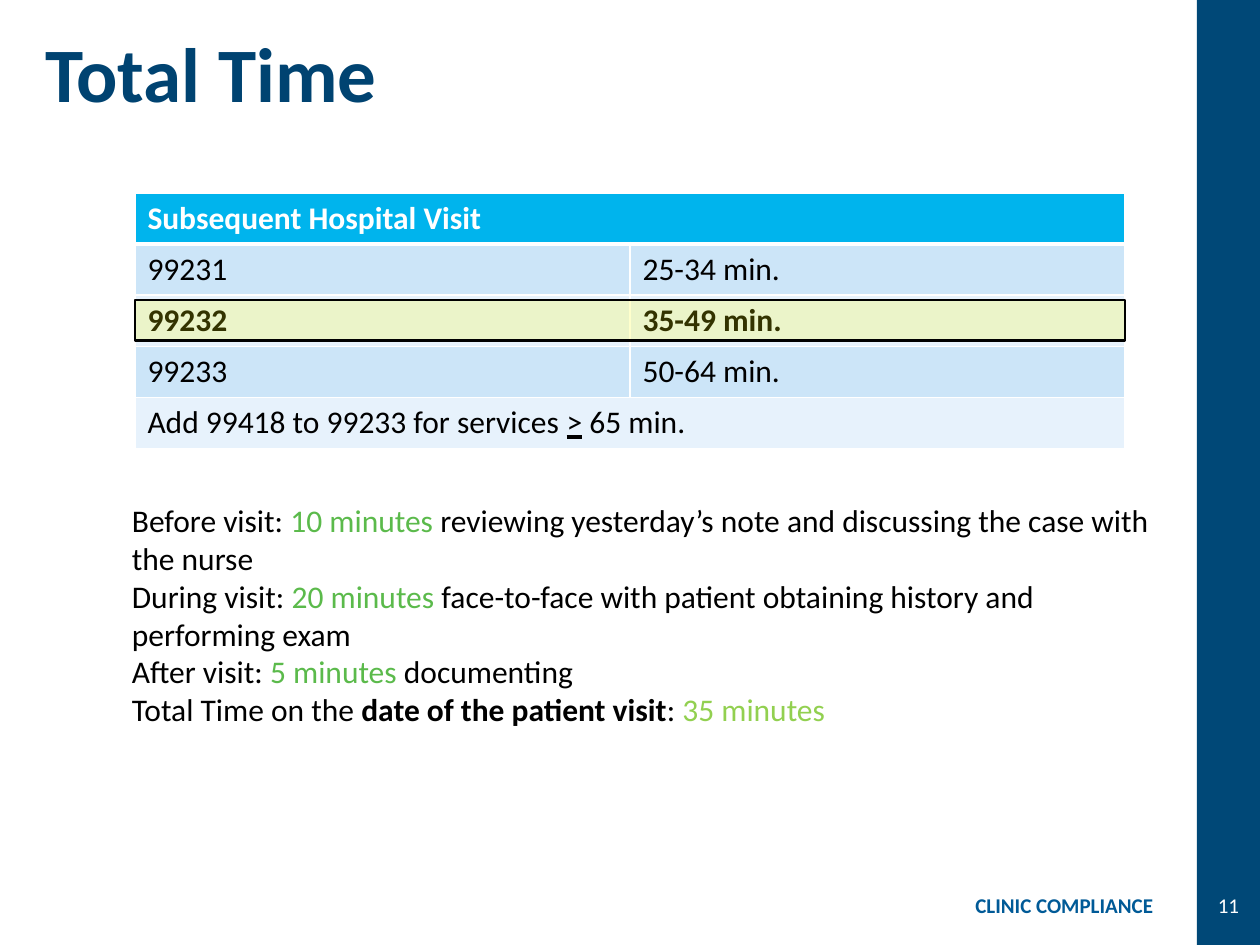
from lxml.etree import SubElement
from pptx import Presentation
from pptx.dml.color import RGBColor
from pptx.enum.shapes import MSO_SHAPE as SHAPE
from pptx.enum.text import MSO_ANCHOR as ANCHOR, PP_ALIGN as ALIGN
from pptx.oxml.ns import qn
from pptx.util import Cm, Pt

NAVY = RGBColor(0x00, 0x48, 0x77)
TITLE_BLUE = RGBColor(0x00, 0x43, 0x71)
FOOTER_BLUE = RGBColor(0x00, 0x5A, 0x97)
HEADER_BLUE = RGBColor(0x00, 0xB4, 0xED)
BAND_DARK = RGBColor(0xCC, 0xE5, 0xF8)
BAND_LIGHT = RGBColor(0xE7, 0xF2, 0xFC)
GREEN = RGBColor(0x5B, 0xBA, 0x4B)
LIME = RGBColor(0x92, 0xD0, 0x50)
YELLOW = RGBColor(0xFF, 0xFF, 0x00)
BLACK = RGBColor(0x00, 0x00, 0x00)
WHITE = RGBColor(0xFF, 0xFF, 0xFF)

FONT = "Calibri"
TABLE_LEFT, TABLE_WIDTH, ROW_HEIGHT = Cm(2.72), Cm(19.96), Cm(1.03)

VISIT_CODES = [
    ("99231", "25-34 min."),
    ("99232", "35-49 min."),
    ("99233", "50-64 min."),
]
TIME_NOTES = [
    [("Before visit: ", BLACK, False), ("10 minutes", GREEN, False),
     (" reviewing yesterday’s note and discussing the case with the nurse", BLACK, False)],
    [("During visit: ", BLACK, False), ("20 minutes", GREEN, False),
     (" face-to-face with patient obtaining history and performing exam", BLACK, False)],
    [("After visit: ", BLACK, False), ("5 minutes ", GREEN, False),
     ("documenting", BLACK, False)],
    [("Total Time on the ", BLACK, False), ("date of the patient visit", BLACK, True),
     (": ", BLACK, False), ("35 minutes", LIME, False)],
]


def set_font(font, size, color, bold=False):
    """Apply the slide's typeface with a size, colour and weight."""
    font.name, font.size, font.bold = FONT, Pt(size), bold
    font.color.rgb = color


def add_text_frame(slide, left, top, width, height, anchor=ANCHOR.TOP):
    """Add a wrapping text box and return its text frame."""
    tf = slide.shapes.add_textbox(left, top, width, height).text_frame
    tf.word_wrap = True
    tf.vertical_anchor = anchor
    return tf


def add_line(tf, text, size, color, bold=False, align=ALIGN.LEFT):
    """Write a single-style line in a text frame and return the paragraph."""
    p = tf.paragraphs[0]
    p.text, p.alignment = text, align
    set_font(p.font, size, color, bold)
    return p


def add_rect(slide, left, top, width, height, color):
    """Add a plain rectangle without outline or shadow."""
    sp = slide.shapes.add_shape(SHAPE.RECTANGLE, left, top, width, height)
    sp.shadow.inherit = False
    sp.fill.solid()
    sp.fill.fore_color.rgb = color
    sp.line.fill.background()
    return sp


def add_highlight(slide, left, top, width, height):
    """Add a translucent yellow frame with a black outline."""
    sp = add_rect(slide, left, top, width, height, YELLOW)
    color = sp._element.spPr.find(qn("a:solidFill"))[0]
    SubElement(color, qn("a:alpha"), val="20000")
    sp.line.color.rgb = BLACK
    sp.line.width = Pt(1.5)


def style_cell(cell, fill, top=1, bottom=1):
    """Give a cell white borders and a solid fill."""
    tcPr = cell._tc.get_or_add_tcPr()
    for side, width in (("L", 1), ("R", 1), ("T", top), ("B", bottom)):
        ln = SubElement(tcPr, qn(f"a:ln{side}"), w=str(Pt(width)))
        SubElement(SubElement(ln, qn("a:solidFill")), qn("a:srgbClr"), val=str(WHITE))
    cell.fill.solid()
    cell.fill.fore_color.rgb = fill


def add_visit_table(slide):
    """Add the table of visit codes and their time ranges."""
    count = len(VISIT_CODES) + 2
    table = slide.shapes.add_table(
        count, 2, TABLE_LEFT, Cm(3.89), TABLE_WIDTH, ROW_HEIGHT * count).table
    for i, row in enumerate(table.rows):
        row.height = ROW_HEIGHT
        band = BAND_DARK if i % 2 else BAND_LIGHT
        for cell in row.cells:
            style_cell(cell, band if i else HEADER_BLUE,
                       top=3 if i == 1 else 1, bottom=1 if i else 3)
    for i in (0, count - 1):
        table.cell(i, 0).merge(table.cell(i, 1))
    add_line(table.cell(0, 0).text_frame, "Subsequent Hospital Visit", 18, WHITE, True)
    for i, values in enumerate(VISIT_CODES, 1):
        for j, value in enumerate(values):
            add_line(table.cell(i, j).text_frame, value, 18, BLACK, i == 2)
    p = table.cell(count - 1, 0).text_frame.paragraphs[0]
    set_font(p.font, 18, BLACK)
    for text in ("Add 99418 to 99233 for services ", ">", " 65 min."):
        r = p.add_run()
        r.text = text
        r.font.underline = text == ">"


def add_time_notes(slide):
    """Add the breakdown of time spent around the visit."""
    tf = add_text_frame(slide, Cm(1.6), Cm(9.98), Cm(21.9), Cm(4.88))
    for i, parts in enumerate(TIME_NOTES):
        p = tf.add_paragraph() if i else tf.paragraphs[0]
        pPr = p._p.get_or_add_pPr()
        pPr.set("marL", str(Cm(0.81)))
        pPr.set("indent", "0")
        p.font.name, p.font.size = FONT, Pt(18)
        for text, color, bold in parts:
            r = p.add_run()
            r.text, r.font.bold = text, bold
            r.font.color.rgb = color


def main():
    """Build the slide and save it."""
    prs = Presentation()
    prs.slide_width, prs.slide_height = Cm(25.4), Cm(19.05)
    slide = prs.slides.add_slide(prs.slide_layouts[6])
    add_rect(slide, Cm(24.13), 0, Cm(1.27), prs.slide_height, NAVY)
    title = add_text_frame(slide, Cm(0.66), Cm(0.66), Cm(22.86), Cm(3.68))
    add_line(title, "Total Time", 44, TITLE_BLUE, True).line_spacing = Pt(45)
    footer = add_text_frame(slide, Cm(5.16), Cm(17.12), Cm(18.34), Cm(1.5), ANCHOR.BOTTOM)
    add_line(footer, "CLINIC COMPLIANCE", 12, FOOTER_BLUE, True, ALIGN.RIGHT)
    number = add_text_frame(slide, Cm(24.13), Cm(17.12), Cm(1.27), Cm(1.5), ANCHOR.BOTTOM)
    add_line(number, "11", 12, WHITE, align=ALIGN.CENTER)
    add_time_notes(slide)
    add_visit_table(slide)
    add_highlight(slide, TABLE_LEFT, Cm(6.05), TABLE_WIDTH, Cm(0.81))
    prs.save("out.pptx")


if __name__ == "__main__":
    main()
